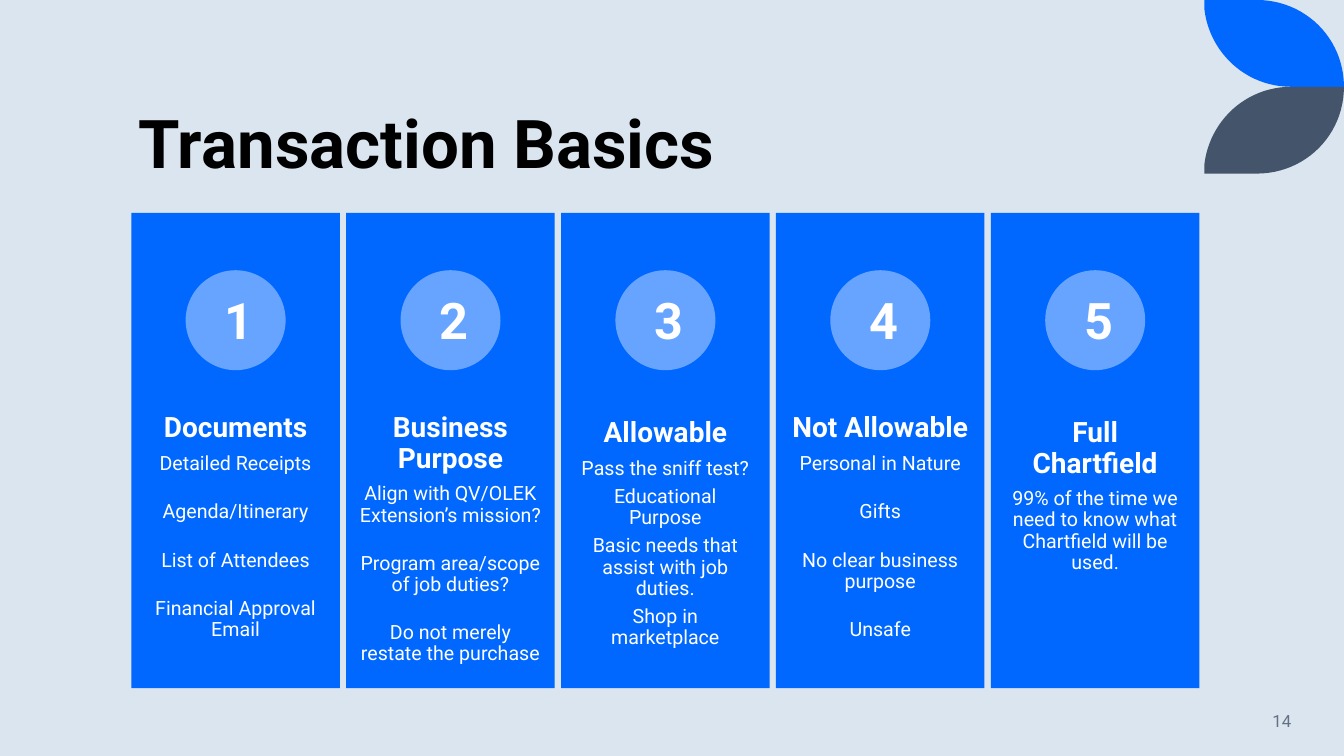
from pptx import Presentation
from pptx.dml.color import RGBColor
from pptx.enum.shapes import MSO_SHAPE
from pptx.enum.text import MSO_ANCHOR, MSO_AUTO_SIZE, PP_ALIGN
from pptx.util import Pt

RECTANGLE, OVAL = MSO_SHAPE.RECTANGLE, MSO_SHAPE.OVAL
TOP, MIDDLE, BOTTOM = MSO_ANCHOR.TOP, MSO_ANCHOR.MIDDLE, MSO_ANCHOR.BOTTOM
LEFT, CENTER, RIGHT = PP_ALIGN.LEFT, PP_ALIGN.CENTER, PP_ALIGN.RIGHT
NO_FIT = MSO_AUTO_SIZE.NONE

BLUE, LIGHT_BLUE, SLATE = "0068FF", "66A4FF", "44546A"
WHITE, BLACK, GRAY, BACKGROUND = "FFFFFF", "000000", "637183", "DAE5EF"


def color(hex_code):
    return RGBColor.from_string(hex_code)


def bezier(points, steps=24):
    """Sample a cubic curve, leaving out its first point."""
    for step in range(1, steps + 1):
        t = step / steps
        weights = ((1 - t) ** 3, 3 * t * (1 - t) ** 2, 3 * t * t * (1 - t), t ** 3)
        yield tuple(sum(w * point[axis] for w, point in zip(weights, points))
                    for axis in (0, 1))


class SlideBuilder:
    font = "Roboto"

    def __init__(self, page):
        self.page = page
        page.background.fill.solid()
        page.background.fill.fore_color.rgb = color(BACKGROUND)

    def paint(self, shape, fill):
        shape.shadow.inherit = False
        shape.fill.solid()
        shape.fill.fore_color.rgb = color(fill)
        shape.line.fill.background()

    def shape(self, kind, left, top, width, height, fill):
        shape = self.page.shapes.add_shape(
            kind, Pt(left), Pt(top), Pt(width), Pt(height))
        self.paint(shape, fill)

    def outline(self, points, fill):
        # Points in whole EMU keep the curves smooth
        points = [(Pt(x), Pt(y)) for x, y in points]
        builder = self.page.shapes.build_freeform(*points[0])
        builder.add_line_segments(points[1:], close=True)
        self.paint(builder.convert_to_shape(), fill)

    def frame(self, box, anchor, inset_x=7.2, inset_y=3.6):
        frame = box.text_frame
        frame.word_wrap = True
        frame.auto_size = NO_FIT
        frame.vertical_anchor = anchor
        frame.margin_left = frame.margin_right = Pt(inset_x)
        frame.margin_top = frame.margin_bottom = Pt(inset_y)
        return frame

    def style(self, para, text, size, fill, align, bold=False, spacing=1.0, after=0):
        para.text = text
        para.alignment = align
        para.line_spacing = spacing
        para.space_before, para.space_after = Pt(0), Pt(after)
        para.font.name = self.font
        para.font.size = Pt(size)
        para.font.bold = bold
        para.font.color.rgb = color(fill)

    def title(self, text, left, top, width, height):
        box = self.page.shapes.title
        box.left, box.top, box.width, box.height = map(Pt, (left, top, width, height))
        para = self.frame(box, BOTTOM).paragraphs[0]
        self.style(para, text, 48, BLACK, LEFT, bold=True, spacing=0.9)

    def text_box(self, left, top, width, height):
        return self.page.shapes.add_textbox(Pt(left), Pt(top), Pt(width), Pt(height))

    def label(self, text, left, top, width, height, size, fill, align,
              anchor=TOP, bold=False, inset_x=7.2):
        box = self.text_box(left, top, width, height)
        para = self.frame(box, anchor, inset_x).paragraphs[0]
        self.style(para, text, size, fill, align, bold)

    def topic(self, heading, items, left, top, width, height, inset, gap):
        box = self.text_box(left, top, width, height)
        frame = self.frame(box, TOP, inset, inset)
        self.style(frame.paragraphs[0], heading, 20, WHITE, CENTER,
                   bold=True, spacing=0.9, after=7)
        for item in items:
            self.style(frame.add_paragraph(), item, 14, WHITE, CENTER,
                       spacing=0.9, after=gap)


# Heading, items, text inset, gap between items
TOPICS = [
    ("Documents", ["Detailed Receipts", "Agenda/Itinerary", "List of Attendees",
                   "Financial Approval Email"], 8, 19.3),
    ("Business Purpose", ["Align with QV/OLEK Extension’s mission?",
                          "Program area/scope of job duties?",
                          "Do not merely restate the purchase"], 8, 19.3),
    ("Allowable", ["Pass the sniff test?", "Educational Purpose",
                   "Basic needs that assist with job duties.",
                   "Shop in marketplace"], 11.5, 4.9),
    ("Not Allowable", ["Personal in Nature", "Gifts", "No clear business purpose",
                       "Unsafe"], 8, 19.3),
    ("Full Chartfield", ["99% of the time we need to know what Chartfield will be used."],
     11.5, 4.9),
]


def main():
    deck = Presentation()
    deck.slide_width, deck.slide_height = Pt(960), Pt(540)
    page = deck.slides.add_slide(deck.slide_layouts[5])
    slide = SlideBuilder(page)

    # Corner leaves, the lower one mirrored
    leaf_left, leaf_height = 860.3, 62
    leaf = [(0, 0), (37.5, 0),
            *bezier([(37.5, 0), (72, 0), (99.7, 27.4), (99.7, 62)]),
            (62, 62),
            *bezier([(62, 62), (29.5, 62), (3.6, 37.5), (0, 6.5)])]
    slide.outline([(leaf_left + x, y) for x, y in leaf], BLUE)
    slide.outline([(leaf_left + x, 2 * leaf_height - y) for x, y in leaf], SLATE)

    slide.title("Transaction Basics", 91.8, 30, 770, 104.4)

    # Numbered columns
    width, pitch, circle, digit_width = 149, 153.5, 71.4, 27
    for index, (heading, items, inset, gap) in enumerate(TOPICS):
        left = 93.8 + index * pitch
        middle = left + width / 2
        slide.shape(RECTANGLE, left, 152, width, 339.5, BLUE)
        slide.topic(heading, items, left, 287.5, width, 136, inset, gap)
        slide.shape(OVAL, middle - circle / 2, 193, circle, circle, LIGHT_BLUE)
        slide.label(str(index + 1), middle - digit_width / 2 + 2.5, 203,
                    digit_width, 51, 36, WHITE, CENTER, bold=True, inset_x=0)

    # Page number
    slide.label("14", 799, 500.5, 130.5, 28.8, 12, GRAY, RIGHT, anchor=MIDDLE)

    deck.save("out.pptx")


if __name__ == "__main__":
    main()
